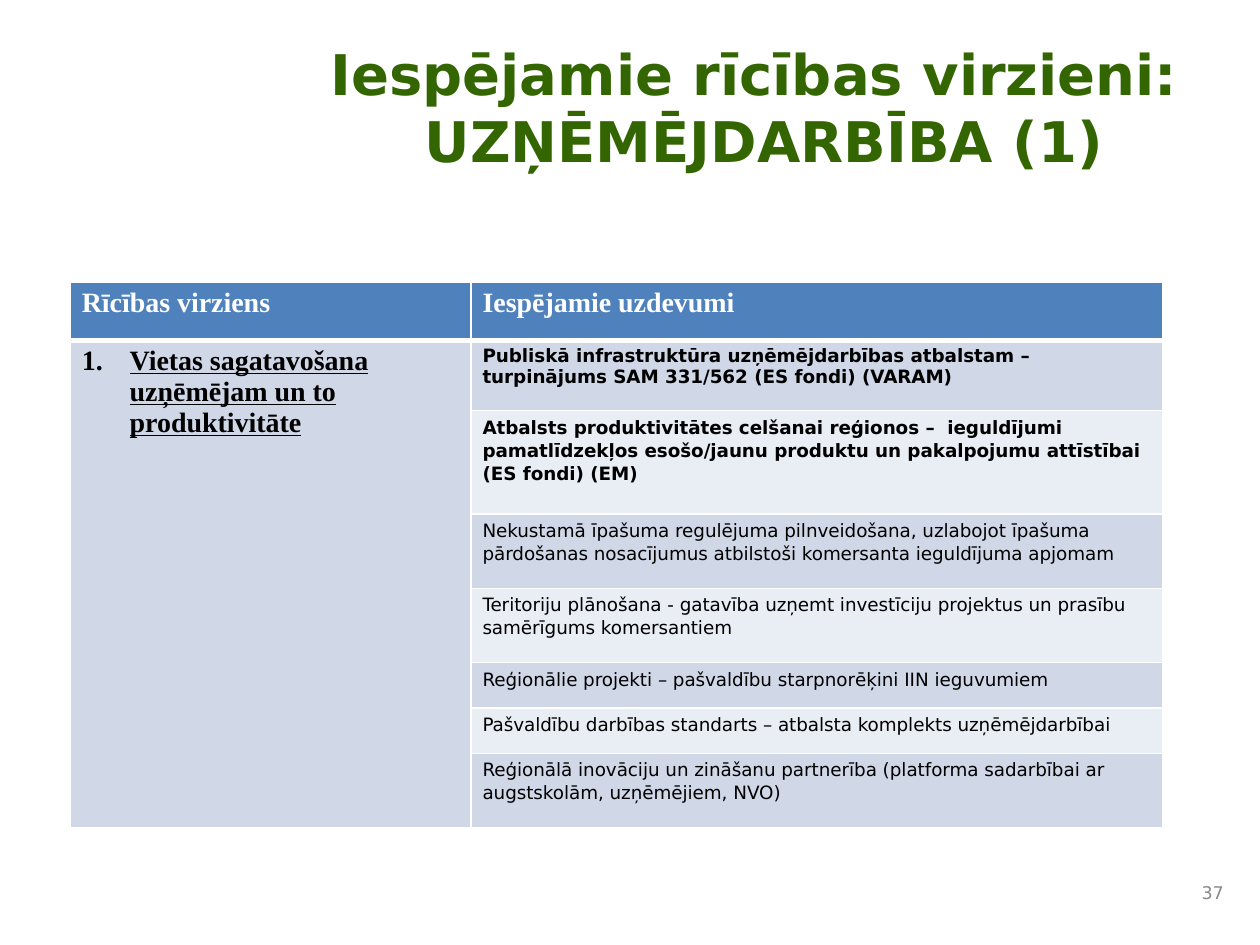
from pptx import Presentation
from pptx.dml.color import RGBColor
from pptx.enum import text as t
from pptx.oxml import ns, xmlchemy as x
from pptx.util import Inches, Pt

COLORS = {
    "title": "336600",
    "header": "4F81BD",
    "band_dark": "D0D8E8",
    "band_light": "E9EDF4",
    "white": "FFFFFF",
    "black": "000000",
    "number": "898989",
}
SANS = "DejaVu Sans"
SERIF = "Times New Roman"
COLUMN_WIDTHS = [3.18, 5.49]
ROW_HEIGHTS = [0.46, 0.56, 0.82, 0.59, 0.59, 0.36, 0.36, 0.59]
HEADERS = ["Rīcības virziens", "Iespējamie uzdevumi"]
DIRECTION = "Vietas sagatavošana uzņēmējam un to produktivitāte"
BOLD_TASKS = 2
TASKS = [
    "Publiskā infrastruktūra uzņēmējdarbības atbalstam – turpinājums SAM 331/562 (ES fondi) (VARAM)",
    "Atbalsts produktivitātes celšanai reģionos –  ieguldījumi pamatlīdzekļos esošo/jaunu produktu un pakalpojumu attīstībai (ES fondi) (EM)",
    "Nekustamā īpašuma regulējuma pilnveidošana, uzlabojot īpašuma pārdošanas nosacījumus atbilstoši komersanta ieguldījuma apjomam",
    "Teritoriju plānošana - gatavība uzņemt investīciju projektus un prasību samērīgums komersantiem",
    "Reģionālie projekti – pašvaldību starpnorēķini IIN ieguvumiem",
    "Pašvaldību darbības standarts – atbalsta komplekts uzņēmējdarbībai",
    "Reģionālā inovāciju un zināšanu partnerība (platforma sadarbībai ar augstskolām, uzņēmējiem, NVO)",
]


def rgb(name):
    return RGBColor.from_string(COLORS[name])


def write_text(frame, content, size, color="black", font=SANS, bold=False,
               underline=False, align=t.PP_ALIGN.LEFT, spacing=1.0,
               anchor=t.MSO_ANCHOR.TOP, numbered=False):
    frame.word_wrap = True
    frame.vertical_anchor = anchor
    paragraph = frame.paragraphs[0]
    paragraph.alignment = align
    paragraph.line_spacing = spacing
    if numbered:
        add_number(paragraph)
    for index, line in enumerate(content.split("\n")):
        if index:
            paragraph.add_line_break()
        run = paragraph.add_run()
        run.text = line
        run.font.size = Pt(size)
        run.font.name = font
        run.font.bold = bold
        run.font.underline = underline
        run.font.color.rgb = rgb(color)


def add_number(paragraph):
    properties = paragraph._p.get_or_add_pPr()
    properties.set("marL", str(Inches(0.38)))
    properties.set("indent", str(Inches(-0.38)))
    bullet = x.OxmlElement("a:buAutoNum")
    bullet.set("type", "arabicPeriod")
    properties.append(bullet)


def set_borders(cell, bottom=1):
    properties = cell._tc.get_or_add_tcPr()
    widths = {"a:lnL": 1, "a:lnR": 1, "a:lnT": 1, "a:lnB": bottom}
    for position, (tag, width) in enumerate(widths.items()):
        line = x.OxmlElement(tag)
        line.set("w", str(Pt(width)))
        fill = x.OxmlElement("a:solidFill")
        color = x.OxmlElement("a:srgbClr")
        color.set("val", COLORS["white"])
        fill.append(color)
        line.append(fill)
        properties.insert(position, line)


def format_cell(cell, fill, bottom=1):
    cell.margin_left = cell.margin_right = Inches(0.09)
    cell.margin_top = cell.margin_bottom = Inches(0.04)
    cell.fill.solid()
    cell.fill.fore_color.rgb = rgb(fill)
    set_borders(cell, bottom)


def add_title(slide):
    title = slide.shapes.title
    title.left, title.top = Inches(2.46), Inches(0.26)
    title.width, title.height = Inches(7.21), Inches(1.13)
    title.text_frame.auto_size = t.MSO_AUTO_SIZE.NONE
    write_text(title.text_frame, "Iespējamie rīcības virzieni: \nUZŅĒMĒJDARBĪBA (1)",
               32, color="title", bold=True, align=t.PP_ALIGN.CENTER)


def add_task_table(slide):
    table = slide.shapes.add_table(
        len(ROW_HEIGHTS), len(COLUMN_WIDTHS), Inches(0.56), Inches(2.24),
        Inches(sum(COLUMN_WIDTHS)), Inches(sum(ROW_HEIGHTS))).table
    for column, width in zip(table.columns, COLUMN_WIDTHS):
        column.width = Inches(width)
    for row, height in zip(table.rows, ROW_HEIGHTS):
        row.height = Inches(height)
    for column, header in enumerate(HEADERS):
        cell = table.cell(0, column)
        format_cell(cell, "header", bottom=3)
        write_text(cell.text_frame, header, 16, color="white", font=SERIF, bold=True)
    for row, task in enumerate(TASKS, start=1):
        format_cell(table.cell(row, 0), "band_dark")
        cell = table.cell(row, 1)
        format_cell(cell, "band_dark" if row % 2 else "band_light")
        write_text(cell.text_frame, task, 10.5, bold=row <= BOLD_TASKS,
                   spacing=1.0 if row == 1 else 1.07)
    direction = table.cell(1, 0)
    direction.merge(table.cell(len(TASKS), 0))
    write_text(direction.text_frame, DIRECTION, 16, font=SERIF, bold=True,
               underline=True, numbered=True)


def add_slide_number(slide):
    box = slide.shapes.add_textbox(Inches(9.33), Inches(6.92), Inches(0.48), Inches(0.33))
    write_text(box.text_frame, "37", 10, color="number",
               align=t.PP_ALIGN.RIGHT, anchor=t.MSO_ANCHOR.MIDDLE)


def main():
    presentation = Presentation()
    presentation.slide_width, presentation.slide_height = Inches(10), Inches(7.5)
    slide = presentation.slides.add_slide(presentation.slide_layouts[5])
    add_task_table(slide)
    add_title(slide)
    add_slide_number(slide)
    presentation.save("out.pptx")


if __name__ == "__main__":
    main()
